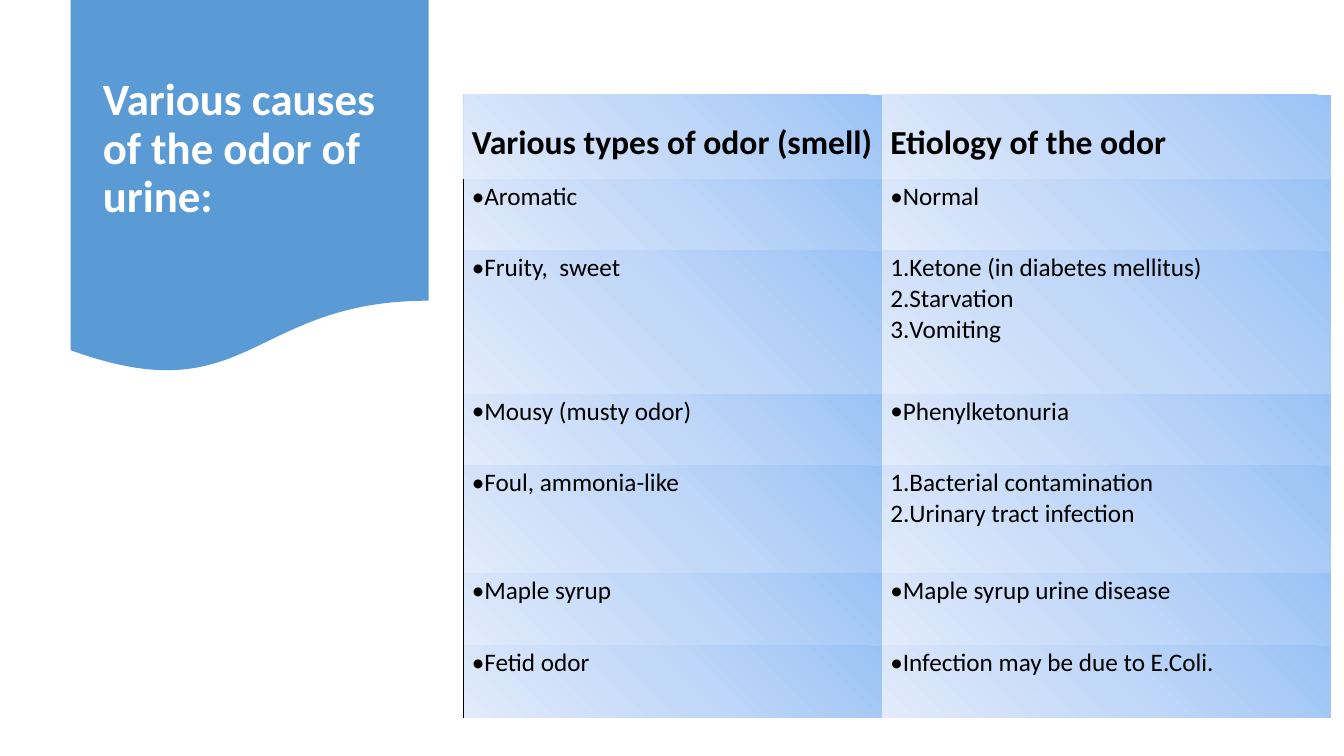
from pptx import Presentation
from pptx import util as u
from pptx.dml import color
from pptx.enum import shapes, text
from pptx.oxml import parse_xml
from pptx.oxml.ns import nsdecls

FONT = "Calibri"
BLUE, WHITE, BLACK = "5B9BD5", "FFFFFF", "000000"
CELL_GRADIENT = [(0, "9AC3F5"), (50, "C2D8F8"), (100, "E1EBFB")]
NO_STYLE = "{2D5ABB26-0587-4C30-8999-92F81FD0307C}"

HEADERS = ["Various types of odor (smell)", "Etiology of the odor"]
ODORS = [
    ("Aromatic", ["Normal"]),
    ("Fruity,  sweet", ["Ketone (in diabetes mellitus)", "Starvation", "Vomiting"]),
    ("Mousy (musty odor)", ["Phenylketonuria"]),
    ("Foul, ammonia-like", ["Bacterial contamination", "Urinary tract infection"]),
    ("Maple syrup", ["Maple syrup urine disease"]),
    ("Fetid odor", ["Infection may be due to E.Coli."]),
]
COL_WIDTHS = [4.15, 4.45]
ROW_HEIGHTS = [0.84, 0.71, 1.42, 0.71, 1.07, 0.72, 0.71]


def rgb(hex_color):
    return color.RGBColor.from_string(hex_color)


def add_xml(parent, xml):
    """Append an element, declaring the drawing namespace on its first tag."""
    tag = xml[1:].split(">")[0].split("/")[0].split()[0]
    parent.append(parse_xml(xml.replace(tag, f"{tag} {nsdecls('a')}", 1)))


def write(tf, lines, size, hex_color=BLACK, bold=False, bullet=None):
    """Fill a text frame, one paragraph a line; bullet is an XML tag."""
    for i, line in enumerate(lines):
        p = tf.paragraphs[0] if i == 0 else tf.add_paragraph()
        p.alignment = text.PP_ALIGN.LEFT
        r = p.add_run()
        r.text = line
        r.font.name, r.font.size, r.font.bold = FONT, u.Pt(size), bold
        r.font.color.rgb = rgb(hex_color)
        if bullet:
            pPr = p._p.get_or_add_pPr()
            add_xml(pPr, f'<a:buFont typeface="{FONT}"/>')
            add_xml(pPr, bullet)


def add_banner(s, x, y, w, h):
    """Wavy banner with the slide title on it."""
    sp = s.shapes.add_shape(shapes.MSO_SHAPE.FLOWCHART_DOCUMENT,
                            *map(u.Inches, (x, y, w, h)))
    sp.shadow.inherit = False
    sp.fill.solid()
    sp.fill.fore_color.rgb = rgb(BLUE)
    sp.line.fill.background()

    title = s.shapes.title
    title._element.addprevious(sp._element)
    title.left, title.top = u.Inches(x + 0.22), u.Inches(y + 0.19)
    title.width, title.height = u.Inches(w - 0.44), u.Inches(2.59)
    tf = title.text_frame
    tf.word_wrap = True
    tf.auto_size = text.MSO_AUTO_SIZE.NONE
    tf.vertical_anchor = text.MSO_ANCHOR.MIDDLE
    write(tf, ["Various causes of the odor of urine:"], 32, WHITE, bold=True)
    tf.paragraphs[0].line_spacing = 0.9
    tf.paragraphs[0].space_after = u.Pt(6)


def style_cell(cell, left_border):
    cell.margin_left, cell.margin_top = u.Inches(0.08), u.Inches(0.02)
    cell.margin_right, cell.margin_bottom = u.Inches(0.07), u.Inches(0.16)
    tcPr = cell._tc.get_or_add_tcPr()
    if left_border:
        add_xml(tcPr, f'<a:lnL w="12700"><a:solidFill><a:srgbClr val="{BLACK}"/>'
                      '</a:solidFill></a:lnL>')
    stops = "".join(f'<a:gs pos="{pos * 1000}"><a:srgbClr val="{c}"/></a:gs>'
                    for pos, c in CELL_GRADIENT)
    add_xml(tcPr, f'<a:gradFill><a:gsLst>{stops}</a:gsLst>'
                  f'<a:lin ang="{135 * 60000}" scaled="0"/></a:gradFill>')


def add_odor_table(s, x, y):
    frame = s.shapes.add_table(
        len(ROW_HEIGHTS), len(COL_WIDTHS), u.Inches(x), u.Inches(y),
        u.Inches(sum(COL_WIDTHS)), u.Inches(sum(ROW_HEIGHTS)))
    table = frame.table
    table.first_row = table.horz_banding = False
    table._tbl.tblPr[0].text = NO_STYLE
    for column, width in zip(table.columns, COL_WIDTHS):
        column.width = u.Inches(width)
    for row, height in zip(table.rows, ROW_HEIGHTS):
        row.height = u.Inches(height)

    for col, header in enumerate(HEADERS):
        cell = table.cell(0, col)
        cell.vertical_anchor = text.MSO_ANCHOR.BOTTOM
        style_cell(cell, left_border=False)
        write(cell.text_frame, [header], 24, bold=True)
    for row, (odor, causes) in enumerate(ODORS, 1):
        for col, lines in enumerate(([odor], causes)):
            cell = table.cell(row, col)
            style_cell(cell, left_border=col == 0)
            bullet = ('<a:buAutoNum type="arabicPeriod"/>' if len(lines) > 1
                      else '<a:buChar char="•"/>')
            write(cell.text_frame, lines, 18, bullet=bullet)


def main():
    prs = Presentation()
    prs.slide_width, prs.slide_height = u.Inches(13.33), u.Inches(7.5)
    s = prs.slides.add_slide(prs.slide_layouts[5])
    add_banner(s, 0.7, 0, 3.55, 3.72)
    add_odor_table(s, 4.6, 0.94)
    prs.save("out.pptx")


if __name__ == "__main__":
    main()
